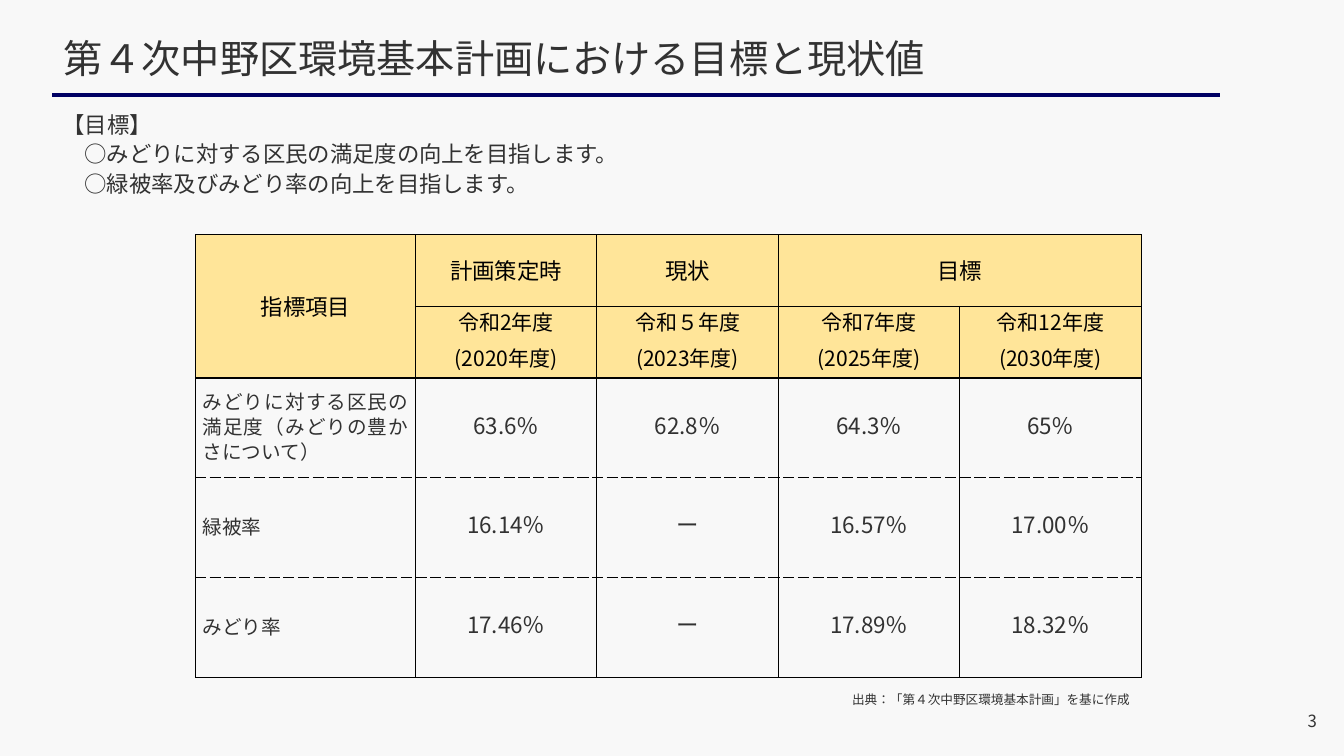
from lxml import etree
from pptx import Presentation
from pptx.dml.color import RGBColor
from pptx.enum.shapes import MSO_CONNECTOR
from pptx.enum.text import MSO_ANCHOR, PP_ALIGN
from pptx.oxml.ns import qn
from pptx.util import Inches, Pt

LINE = MSO_CONNECTOR.STRAIGHT
MIDDLE, TOP = MSO_ANCHOR.MIDDLE, MSO_ANCHOR.TOP
LEFT, CENTER, RIGHT = PP_ALIGN.LEFT, PP_ALIGN.CENTER, PP_ALIGN.RIGHT
JUST = PP_ALIGN.JUSTIFY
FONT = "Noto Sans CJK JP"
COLORS = {"back": "F8F8F8", "rule": "000064", "text": "323232",
          "head": "FFE599", "black": "000000"}

WIDTHS = [2.18] + [1.8] * 4
HEIGHTS = [0.71] * 2 + [0.99] * 3
HEADS = [
    ["指標項目", "計画策定時", "現状", "目標", ""],
    ["", "令和2年度\n(2020年度)", "令和５年度\n(2023年度)",
     "令和7年度\n(2025年度)", "令和12年度\n(2030年度)"],
]
BODY = [
    ["みどりに対する区民の満足度（みどりの豊かさについて）",
     "63.6％", "62.8％", "64.3％", "65％"],
    ["緑被率", "16.14％", "ー", "16.57％", "17.00％"],
    ["みどり率", "17.46％", "ー", "17.89％", "18.32％"],
]


def color(name):
    return RGBColor.from_string(COLORS[name])


def write(frame, text, size=16, ink="text", align=LEFT, anchor=TOP,
          before=0, after=0, line=None, indents=None):
    frame.word_wrap = True
    frame.vertical_anchor = anchor
    for i, words in enumerate(text.split("\n")):
        para = frame.add_paragraph() if i else frame.paragraphs[0]
        para.alignment = align
        para.space_before = Pt(before if i else 0)
        para.space_after = Pt(after)
        if line:
            para.line_spacing = Pt(line)
        if indents:
            props = para._p.get_or_add_pPr()
            props.set("marL", str(Inches(indents[i])))
            props.set("indent", "0")
        run = para.add_run()
        run.text = words
        font = run.font
        font.size = Pt(size)
        font.color.rgb = color(ink)
        font.name = FONT
        props = run._r.get_or_add_rPr()
        props.set("lang", "ja-JP")
        etree.SubElement(props, qn("a:ea")).set("typeface", FONT)


def label(slide, box, text, **style):
    shape = slide.shapes.add_textbox(*map(Inches, box))
    write(shape.text_frame, text, **style)


def header(slide, box):
    left, top, width, height = box
    title = slide.shapes.title
    title.left, title.top = Inches(left), Inches(top)
    title.width, title.height = Inches(width), Inches(height)
    write(title.text_frame, "第４次中野区環境基本計画における目標と現状値",
          size=28, align=JUST, anchor=MIDDLE)
    y = Inches(top + height + 0.01)
    rule = slide.shapes.add_connector(LINE, Inches(left - 0.01), y,
                                      Inches(left + 11.57), y)
    rule.line.color.rgb = color("rule")
    rule.line.width = Pt(3)
    etree.SubElement(rule._element.spPr, qn("a:effectLst"))


def goals(slide, box):
    label(slide, box, "【目標】\n○みどりに対する区民の満足度の向上を目指します。\n"
          "○緑被率及びみどり率の向上を目指します。",
          before=2, indents=[0, 0.22, 0.22])


def border(cell, dashes):
    props = cell._tc.get_or_add_tcPr()
    for side in "LRTB":
        edge = etree.SubElement(props, qn("a:ln" + side), w=str(Pt(1)))
        fill = etree.SubElement(edge, qn("a:solidFill"))
        etree.SubElement(fill, qn("a:srgbClr"), val=COLORS["black"])
        dash = "dash" if side in dashes else "solid"
        etree.SubElement(edge, qn("a:prstDash"), val=dash)


def inset(cell, side, edge):
    cell.margin_left = cell.margin_right = Inches(side)
    cell.margin_top = cell.margin_bottom = Inches(edge)


def head(cell, text, row):
    border(cell, "")
    cell.fill.solid()
    cell.fill.fore_color.rgb = color("head")
    inset(cell, 0.1, 0)
    if text:
        write(cell.text_frame, text, size=15 if row else 16, ink="black",
              align=CENTER, after=8, line=18 if row else 22)
    cell.vertical_anchor = MIDDLE


def value(cell, text, row, col):
    border(cell, ("T" if row else "") + ("B" if row < len(BODY) - 1 else ""))
    cell.fill.background()
    inset(cell, 0.07, 0)
    write(cell.text_frame, text, size=16 if col else 14,
          align=CENTER if col else JUST, after=8, line=18)
    cell.vertical_anchor = MIDDLE


def targets(slide, left, top):
    box = map(Inches, (left, top, sum(WIDTHS), sum(HEIGHTS)))
    table = slide.shapes.add_table(len(HEIGHTS), len(WIDTHS), *box).table
    table.first_row = table.horz_banding = False
    for col, width in zip(table.columns, WIDTHS):
        col.width = Inches(width)
    for row, height in zip(table.rows, HEIGHTS):
        row.height = Inches(height)
    for r, texts in enumerate(HEADS):
        for c, text in enumerate(texts):
            head(table.cell(r, c), text, r)
    for r, texts in enumerate(BODY):
        for c, text in enumerate(texts):
            value(table.cell(r + len(HEADS), c), text, r, c)
    for first, last in [((0, 0), (1, 0)), ((0, 3), (0, 4))]:
        cell = table.cell(*first)
        cell.merge(table.cell(*last))
        inset(cell, 0.12, 0.06)


def main():
    deck = Presentation()
    deck.slide_width, deck.slide_height = Inches(13.33), Inches(7.5)
    slide = deck.slides.add_slide(deck.slide_layouts[5])
    slide.background.fill.solid()
    slide.background.fill.fore_color.rgb = color("back")
    header(slide, (0.53, 0.21, 10.78, 0.72))
    goals(slide, (0.52, 1.05, 11.58, 0.96))
    targets(slide, 1.94, 2.33)
    label(slide, (6.7, 6.81, 4.6, 0.25),
          "出典：「第４次中野区環境基本計画」を基に作成", size=9, align=RIGHT)
    label(slide, (10.05, 6.95, 3.11, 0.4), "3",
          size=12, align=RIGHT, anchor=MIDDLE)
    deck.save("out.pptx")


if __name__ == "__main__":
    main()
